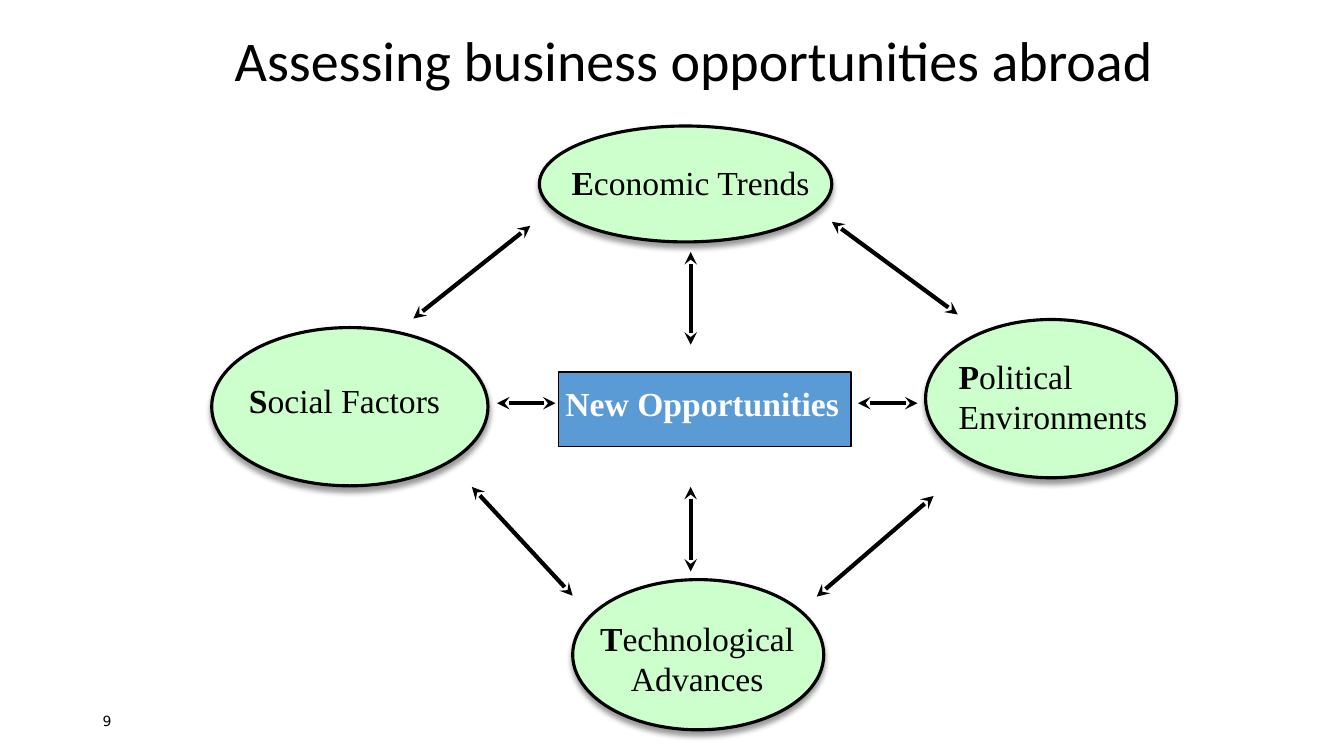
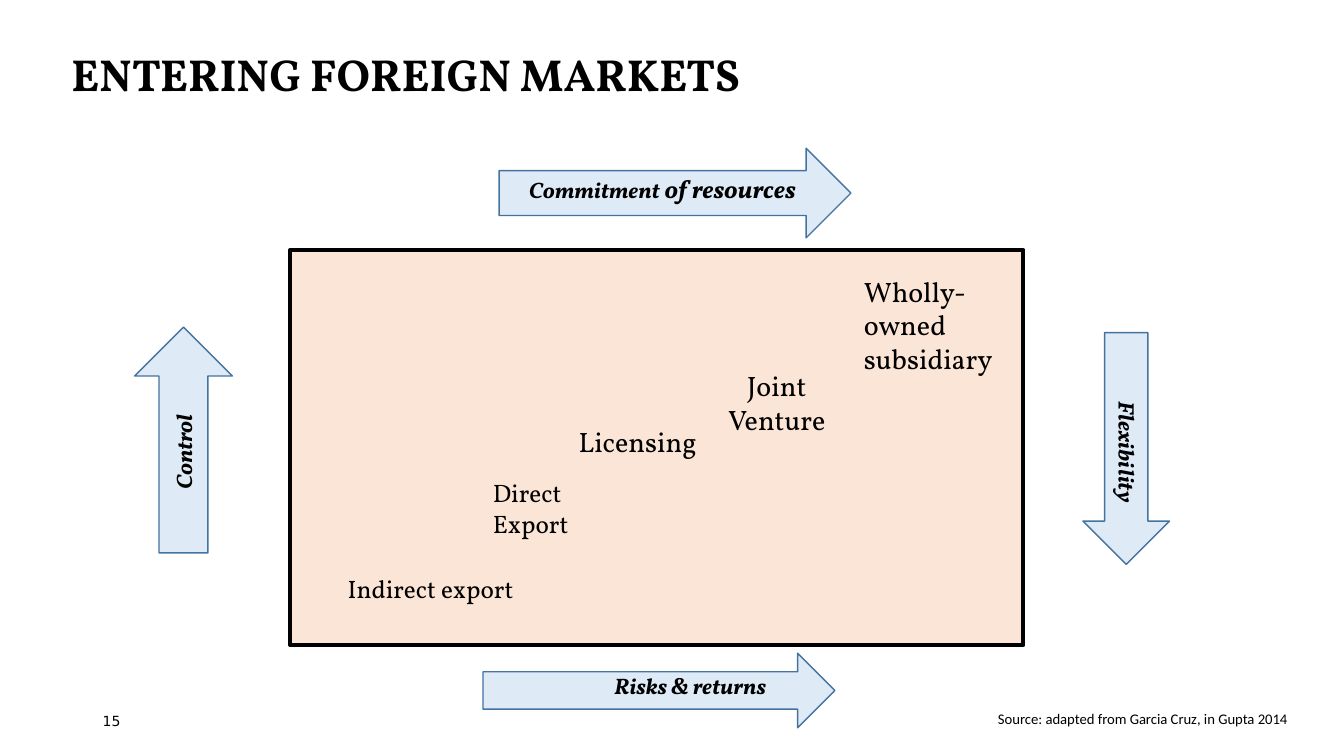
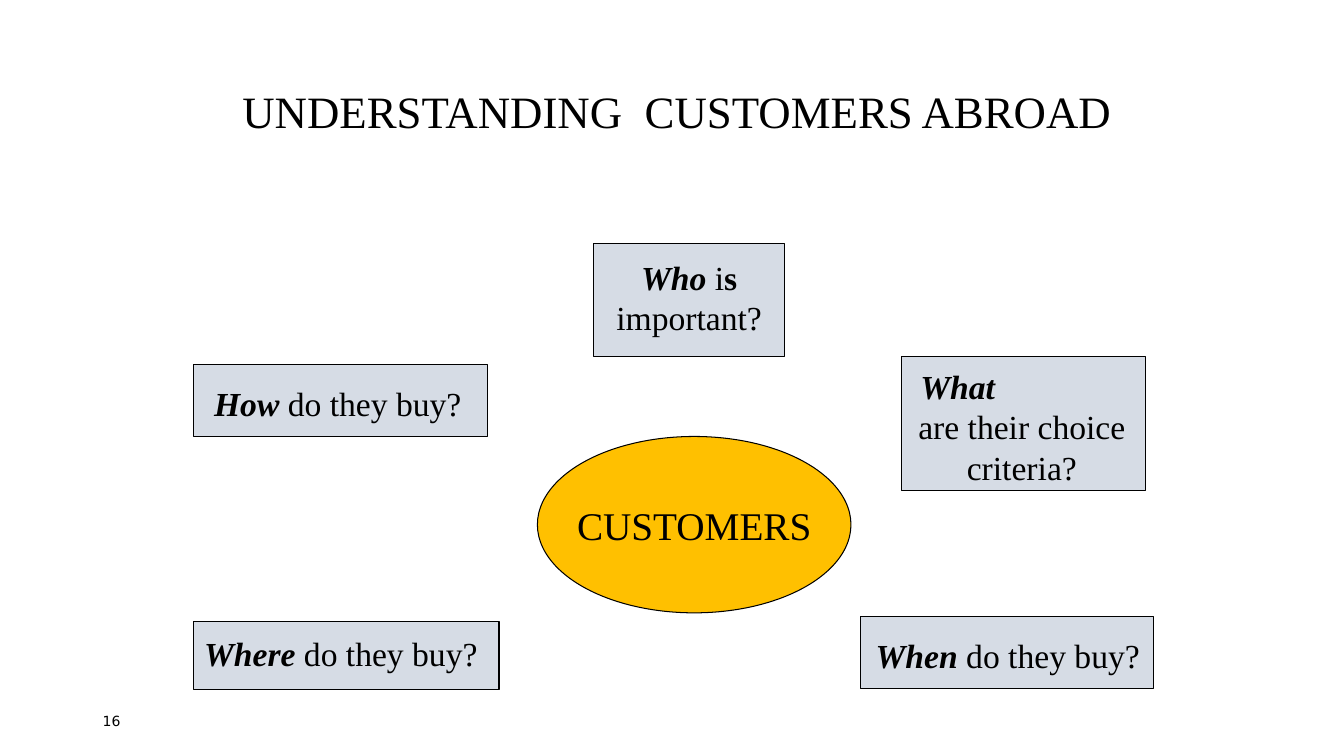
"""Build three slides on assessing, entering and understanding foreign markets."""
import pptx
import pptx.dml.color
import pptx.enum.shapes
import pptx.enum.text
import pptx.oxml
import pptx.oxml.ns
import pptx.util

Inches = pptx.util.Inches
Pt = pptx.util.Pt
RGBColor = pptx.dml.color.RGBColor
MSO_SHAPE = pptx.enum.shapes.MSO_SHAPE
ALIGN = pptx.enum.text.PP_ALIGN
ANCHOR = pptx.enum.text.MSO_ANCHOR

BLACK = RGBColor(0x00, 0x00, 0x00)
WHITE = RGBColor(0xFF, 0xFF, 0xFF)
BLUE = RGBColor(0x5B, 0x9B, 0xD5)
MINT = RGBColor(0xCC, 0xFF, 0xCC)
PALE_BLUE = RGBColor(0xDE, 0xEB, 0xF7)
STEEL = RGBColor(0x43, 0x73, 0x9E)
PEACH = RGBColor(0xFB, 0xE5, 0xD6)
GREY_BLUE = RGBColor(0xD6, 0xDC, 0xE5)
AMBER = RGBColor(0xFF, 0xC0, 0x00)

PAGE = {"name": "DejaVu Sans", "size": Pt(10)}
TIMES = {"name": "Times New Roman", "size": Pt(24)}
VOLLKORN = {"name": "Vollkorn", "size": Pt(20)}
CALIBRI = {"name": "Calibri", "size": Pt(40)}
BOLD = {"bold": True}
BOLD_ITALIC = {"bold": True, "italic": True}
ARROW_LABEL = {**VOLLKORN, **BOLD_ITALIC, "size": Pt(16)}

A_NS = pptx.oxml.ns.nsdecls("a")
SHADOW = (
    f'<a:outerShdw {A_NS} blurRad="{Pt(4)}" dist="{Pt(3)}" dir="5400000" algn="ctr" rotWithShape="0">'
    '<a:srgbClr val="000000"><a:alpha val="40000"/></a:srgbClr></a:outerShdw>'
)


def add_figure(slide, kind, frame, fill, line, width, rotation=0):
    """Add a filled, outlined preset shape."""
    figure = slide.shapes.add_shape(kind, *map(Inches, frame))
    figure.shadow.inherit = False
    figure.fill.solid()
    figure.fill.fore_color.rgb = fill
    figure.line.color.rgb = line
    figure.line.width = Pt(width)
    figure.rotation = rotation
    return figure


def add_text(slide, frame, paragraphs, base, color=BLACK, align=ALIGN.LEFT, wrap=False, rotation=0):
    """Add a text box; each paragraph is a list of (text, format) runs."""
    box = slide.shapes.add_textbox(*map(Inches, frame))
    box.rotation = rotation
    text_frame = box.text_frame
    text_frame.word_wrap = wrap
    text_frame.auto_size = pptx.enum.text.MSO_AUTO_SIZE.SHAPE_TO_FIT_TEXT
    for index, runs in enumerate(paragraphs):
        paragraph = text_frame.add_paragraph() if index else text_frame.paragraphs[0]
        paragraph.alignment = align
        for words, extra in runs:
            run = paragraph.add_run()
            run.text = words
            run.font.color.rgb = color
            for key, value in {**base, **extra}.items():
                setattr(run.font, key, value)
    return text_frame


deck = pptx.Presentation()
deck.slide_width = Inches(13.33)
deck.slide_height = Inches(7.5)

slides = []
for number in ("9", "15", "16"):
    slide = deck.slides.add_slide(deck.slide_layouts[6])
    page = add_text(slide, (0.92, 6.95, 3, 0.4), [[(number, {})]], PAGE, wrap=True)
    page.auto_size = pptx.enum.text.MSO_AUTO_SIZE.NONE
    page.vertical_anchor = ANCHOR.MIDDLE
    slides.append(slide)
assessing, entering, understanding = slides

add_text(assessing, (2.23, 0.2, 9.4, 0.77), [[("Assessing business opportunities abroad", {})]], CALIBRI)
add_figure(assessing, MSO_SHAPE.RECTANGLE, (5.54, 3.69, 2.9, 0.74), BLUE, BLACK, 1)
add_text(assessing, (5.51, 3.75, 2.94, 0.51), [[("New Opportunities", BOLD)]], TIMES, WHITE)

factors = [
    ((5.35, 1.25, 2.9, 1.15), (5.57, 1.56, 2.59, 0.51), ["Economic Trends"], ALIGN.LEFT),
    ((2.1, 3.25, 2.74, 1.57), (2.37, 3.72, 2.12, 0.51), ["Social Factors"], ALIGN.LEFT),
    ((9.18, 3.17, 2.49, 1.57), (9.41, 3.48, 2.09, 0.91), ["Political", "Environments"], ALIGN.LEFT),
    ((5.68, 5.75, 2.49, 1.49), (5.8, 6.08, 2.23, 0.91), ["Technological", "Advances"], ALIGN.CENTER),
]
for oval_frame, label_frame, (first, *rest), align in factors:
    oval = add_figure(assessing, MSO_SHAPE.OVAL, oval_frame, MINT, BLACK, 2.25)
    effects = oval._element.spPr.find(pptx.oxml.ns.qn("a:effectLst"))
    effects.append(pptx.oxml.parse_xml(SHADOW))
    label = [[(first[0], BOLD), (first[1:], {})]] + [[(words, {})] for words in rest]
    add_text(assessing, label_frame, label, TIMES, align=align)

links = [
    (6.85, 2.5, 6.85, 3.42),
    (6.85, 4.83, 6.85, 5.67),
    (4.93, 4, 5.51, 4),
    (8.51, 4, 9.1, 4),
    (4.1, 3.16, 5.26, 2.24),
    (8.25, 2.2, 9.5, 3.12),
    (8.1, 5.92, 9.26, 4.92),
    (4.68, 4.83, 5.68, 5.91),
]
for ends in links:
    link = assessing.shapes.add_connector(pptx.enum.shapes.MSO_CONNECTOR.STRAIGHT, *map(Inches, ends))
    link.line.color.rgb = BLACK
    link.line.width = Pt(3)
    properties = link._element.spPr
    outline = properties.find(pptx.oxml.ns.qn("a:ln"))
    for tip in ("headEnd", "tailEnd"):
        outline.append(pptx.oxml.parse_xml(f'<a:{tip} {A_NS} type="stealth"/>'))
    properties.append(pptx.oxml.parse_xml(f"<a:effectLst {A_NS}/>"))

add_text(
    entering, (0.61, 0.41, 7.35, 0.64), [[("ENTERING FOREIGN MARKETS", BOLD)]], {**VOLLKORN, "size": Pt(32)}
)
add_figure(entering, MSO_SHAPE.RECTANGLE, (2.88, 2.48, 7.27, 3.92), PEACH, BLACK, 3)

forces = [
    ((10.02, 4.02, 2.3, 0.86), (10.55, 4.3, 1.26, 0.37), 90, [("Flexibility", {})]),
    ((4.79, 6.48, 3.49, 0.74), (5.96, 6.62, 1.77, 0.37), 0, [("Risks & returns", {})]),
    ((0.7, 3.88, 2.24, 0.97), (1.33, 4.3, 0.98, 0.37), 270, [("Control", {})]),
    (
        (4.95, 1.47, 3.49, 0.89),
        (5.12, 1.67, 2.9, 0.4),
        0,
        [("Commitment", {}), (" of resources", {"size": Pt(18)})],
    ),
]
for arrow_frame, label_frame, rotation, label in forces:
    add_figure(entering, MSO_SHAPE.RIGHT_ARROW, arrow_frame, PALE_BLUE, STEEL, 1, rotation)
    add_text(entering, label_frame, [label], ARROW_LABEL, align=ALIGN.CENTER, rotation=rotation)

entry_modes = [
    ((3.35, 5.64, 1.86, 0.4), ["Indirect export"], 18, ALIGN.LEFT, False),
    ((4.79, 4.69, 0.96, 0.7), ["Direct", "Export"], 18, ALIGN.LEFT, False),
    ((5.64, 4.16, 1.64, 0.43), ["Licensing"], 20, ALIGN.LEFT, True),
    ((7.09, 3.61, 1.23, 0.77), ["Joint", "Venture"], 20, ALIGN.CENTER, True),
    ((8.47, 2.67, 1.64, 1.11), ["Wholly-", "owned", "subsidiary"], 20, ALIGN.LEFT, True),
]
for frame, lines, size, align, wrap in entry_modes:
    mode = [[(words, {"size": Pt(size)})] for words in lines]
    add_text(entering, frame, mode, VOLLKORN, align=align, wrap=wrap)

add_text(
    entering,
    (9.8, 6.99, 3.26, 0.28),
    [[("Source: adapted from Garcia Cruz, in Gupta 2014", {"size": Pt(10.5)})]],
    CALIBRI,
    wrap=True,
)

add_figure(understanding, MSO_SHAPE.OVAL, (5.33, 4.33, 3.11, 1.75), AMBER, BLACK, 0.75)
headings = [
    ((2.09, 0.78, 9.25, 0.63), "UNDERSTANDING  CUSTOMERS ABROAD", 32),
    ((5.58, 4.92, 2.61, 0.57), "CUSTOMERS", 28),
]
for frame, words, size in headings:
    add_text(understanding, frame, [[(words, {"size": Pt(size)})]], TIMES, align=ALIGN.CENTER, wrap=True)

questions = [
    (
        (5.89, 2.42, 1.89, 1.12),
        (5.78, 2.5, 2.11, 0.91),
        [[("Who ", BOLD_ITALIC), ("i", {}), ("s", BOLD), (" important?", {})]],
    ),
    (
        (8.94, 3.54, 2.42, 1.33),
        (8.83, 3.58, 2.61, 1.31),
        [[("What", BOLD_ITALIC)], [("are their choice criteria?", {})]],
    ),
    (
        (8.53, 6.12, 2.91, 0.71),
        (8.33, 6.25, 3.33, 0.5),
        [[("When ", BOLD_ITALIC), ("do they buy?", {})]],
    ),
    (
        (1.92, 6.17, 3.03, 0.67),
        (1.84, 6.23, 3.08, 0.5),
        [[("Where ", BOLD_ITALIC), ("do they buy?", {})]],
    ),
    (
        (1.92, 3.62, 2.92, 0.71),
        (1.92, 3.75, 2.86, 0.5),
        [[("How ", BOLD_ITALIC), ("do they buy?", {})]],
    ),
]
for card_frame, label_frame, question in questions:
    add_figure(understanding, MSO_SHAPE.RECTANGLE, card_frame, GREY_BLUE, BLACK, 0.75)
    label = add_text(understanding, label_frame, question, TIMES, align=ALIGN.CENTER, wrap=True)
    if len(question) > 1:
        opening = label.paragraphs[0]
        opening.alignment = ALIGN.LEFT
        opening._p.get_or_add_pPr().set("marL", str(Inches(0.2)))

deck.save("out.pptx")
